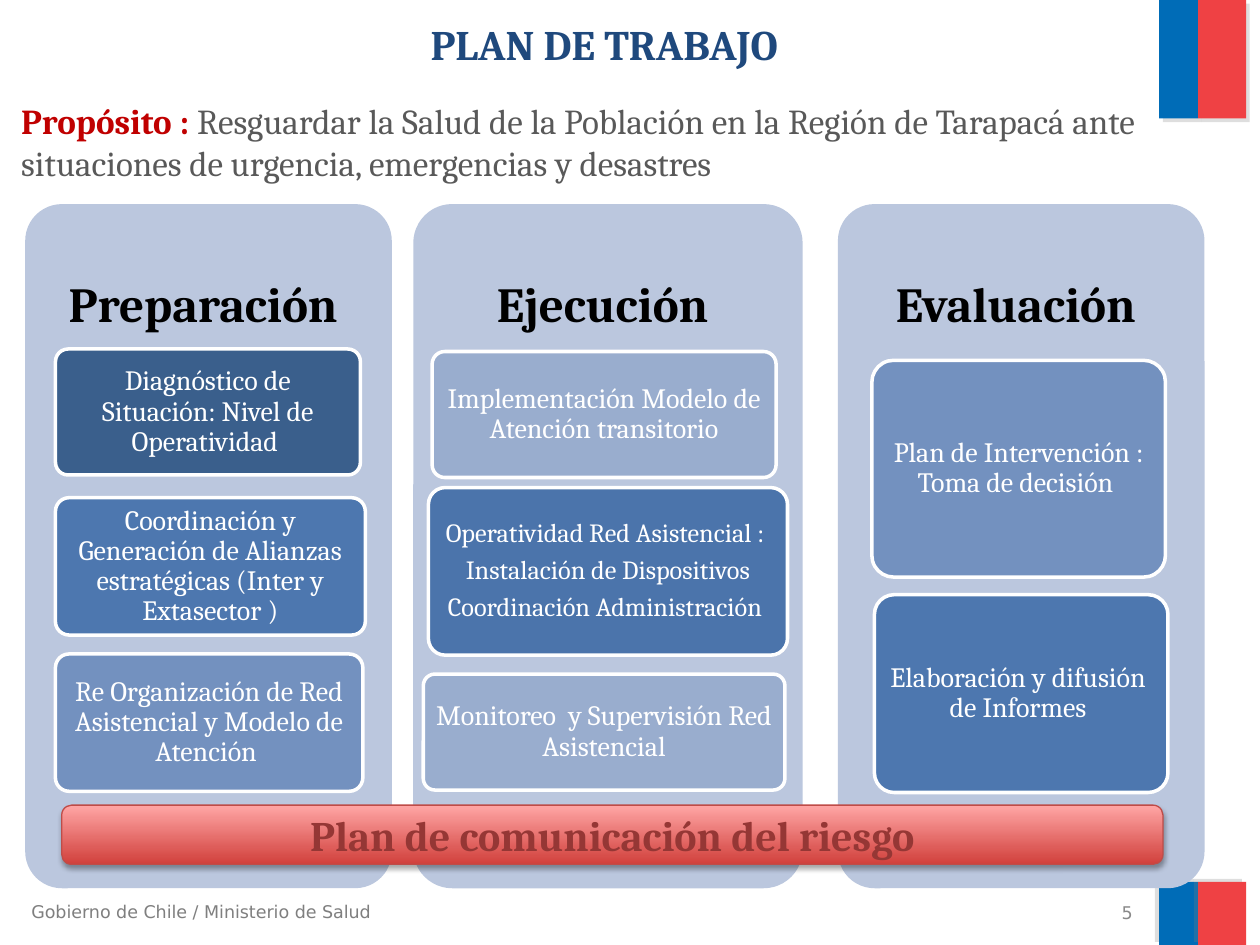
from lxml import etree
from pptx import Presentation
from pptx import util as u
from pptx.dml.color import RGBColor
from pptx.enum import shapes, text
from pptx.oxml.ns import qn

COLORS = {
    "blue": "006CB7", "red": "EF4144", "navy": "1F497D", "crimson": "C00000",
    "gray": "595959", "footer": "7F7F7F", "number": "898989", "black": "000000",
    "white": "FFFFFF", "panel": "BBC7DE", "dark": "3A5F8C", "medium": "4D77AF",
    "network": "4B74AB", "soft": "7391BF", "pale": "99ADCE",
    "banner_low": "D1403C", "banner_high": "FFA6A5", "banner_line": "BF4C48",
    "banner_text": "953735", "shade": "808080",
}
SERIF, SANS = "Cambria", "DejaVu Sans"
LEFT, CENTER, RIGHT = (text.PP_ALIGN.LEFT, text.PP_ALIGN.CENTER,
                       text.PP_ALIGN.RIGHT)
TOP, MIDDLE = text.MSO_ANCHOR.TOP, text.MSO_ANCHOR.MIDDLE
RECT = shapes.MSO_SHAPE.RECTANGLE
ROUND = shapes.MSO_SHAPE.ROUNDED_RECTANGLE
TIGHT = {"line_spacing": 0.9, "space_after": u.Pt(5)}

PANEL_TOP, PANEL_HEIGHT, HEADING_HEIGHT = 1.62, 5.43, 1.63
# Each panel: heading, left, width, cards (box, colour, text size, paragraphs)
PANELS = [
    ("Preparación ", 0.2, 2.91, [
        ((0.44, 2.77, 2.42, 1), "dark", 16,
         ["Diagnóstico de Situación: Nivel de Operatividad "]),
        ((0.44, 3.95, 2.46, 1.09), "medium", 16,
         ["Coordinación y Generación de Alianzas estratégicas "
          "(Inter y Extasector )"]),
        ((0.44, 5.19, 2.44, 1.09), "soft", 16,
         ["Re Organización de Red Asistencial y Modelo de Atención "]),
    ]),
    ("Ejecución ", 3.28, 3.09, [
        ((3.43, 2.79, 2.73, 1), "pale", 16,
         ["Implementación Modelo de Atención transitorio"]),
        ((3.4, 3.87, 2.85, 1.33), "network", 15,
         ["Operatividad Red Asistencial : ", "Instalación de Dispositivos",
          "Coordinación Administración "]),
        ((3.36, 5.35, 2.87, 0.92), "pale", 16,
         ["Monitoreo  y Supervisión Red Asistencial"]),
    ]),
    ("Evaluación ", 6.65, 2.91, [
        ((6.92, 2.86, 2.33, 1.72), "soft", 16,
         ["Plan de Intervención : Toma de decisión "]),
        ((6.94, 4.72, 2.33, 1.57), "medium", 16,
         ["Elaboración y difusión  de Informes "]),
    ]),
]


def rgb(name):
    return RGBColor.from_string(COLORS[name])


def inches(box):
    return [u.Inches(v) for v in box]


def font(size, color, bold=False, name=SERIF):
    return {"size": u.Pt(size), "color": color, "bold": bold, "name": name}


class Deck:
    """Holds the style and the current slide."""

    def __init__(self, width, height):
        self.prs = Presentation()
        self.prs.slide_width, self.prs.slide_height = inches((width, height))
        self.s = self.prs.slides.add_slide(self.prs.slide_layouts[5])

    def fill_text(self, sp, paragraphs, align=LEFT, anchor=TOP,
                  inset=(0.1, 0.05), para=None):
        """Fill a shape with paragraphs, each a list of (text, font) runs."""
        tf = sp.text_frame
        x, y = inches(inset)
        frame = {"word_wrap": True, "auto_size": text.MSO_AUTO_SIZE.NONE,
                 "vertical_anchor": anchor, "margin_left": x,
                 "margin_right": x, "margin_top": y, "margin_bottom": y}
        for key, value in frame.items():
            setattr(tf, key, value)
        for i, runs in enumerate(paragraphs):
            p = tf.add_paragraph() if i else tf.paragraphs[0]
            for key, value in {"alignment": align, **(para or {})}.items():
                setattr(p, key, value)
            for words, style in runs:
                r = p.add_run()
                r.text = words
                for key, value in style.items():
                    if key == "color":
                        r.font.color.rgb = rgb(value)
                    else:
                        setattr(r.font, key, value)

    def title(self, box, words, style):
        sp = self.s.shapes.title
        sp.left, sp.top, sp.width, sp.height = inches(box)
        self.fill_text(sp, [[(words, style)]], CENTER)

    def text(self, box, paragraphs, **layout):
        sp = self.s.shapes.add_textbox(*inches(box))
        self.fill_text(sp, paragraphs, **layout)

    def shape(self, kind, box, fill=None, line=None, weight=2, adj=None):
        sp = self.s.shapes.add_shape(kind, *inches(box))
        sp.shadow.inherit = False
        if fill:
            sp.fill.solid()
            sp.fill.fore_color.rgb = rgb(fill)
        if line:
            sp.line.color.rgb = rgb(line)
            sp.line.width = u.Pt(weight)
        else:
            sp.line.fill.background()
        if adj is not None:
            sp.adjustments[0] = adj
        return sp

    def shadow(self, sp, color, alpha, blur, dist, angle):
        effects = sp._element.spPr.find(qn("a:effectLst"))
        outer = etree.SubElement(
            effects, qn("a:outerShdw"), blurRad=str(u.Pt(blur)),
            dist=str(u.Pt(dist)), dir=str(angle * 60000), rotWithShape="0")
        clr = etree.SubElement(outer, qn("a:srgbClr"), val=COLORS[color])
        etree.SubElement(clr, qn("a:alpha"), val=str(alpha * 1000))

    def flag(self, top, height, angle):
        for left, width, color in ((9.2, 0.31, "blue"), (9.51, 0.38, "red")):
            sp = self.shape(RECT, (left, top, width, height), color)
            self.shadow(sp, "shade", 25, 0, 3, angle)

    def panel(self, heading, left, width, cards):
        self.shape(ROUND, (left, PANEL_TOP, width, PANEL_HEIGHT), "panel",
                   adj=0.1)
        self.text((left, PANEL_TOP, width, HEADING_HEIGHT),
                  [[(heading, font(28, "black", True))]], align=CENTER,
                  anchor=MIDDLE, inset=(0.12, 0.12), para=TIGHT)
        for card in cards:
            self.card(*card)

    def card(self, box, fill, size, lines):
        sp = self.shape(ROUND, box, fill, "white", adj=0.1)
        style = font(size, "white")
        self.fill_text(sp, [[(line, style)] for line in lines], CENTER, MIDDLE,
                       (0.07, 0.06), TIGHT)

    def banner(self, box, words):
        sp = self.shape(ROUND, box, line="banner_line", weight=0.75)
        sp.fill.gradient()
        sp.fill.gradient_angle = 90
        stops = zip(sp.fill.gradient_stops, ("banner_low", "banner_high"))
        for position, (stop, color) in enumerate(stops):
            stop.position = position
            stop.color.rgb = rgb(color)
        self.shadow(sp, "black", 35, 3.1, 1.8, 90)
        self.fill_text(sp, [[(words, font(24, "banner_text", True))]], CENTER,
                       MIDDLE)


def main():
    deck = Deck(10, 7.5)
    deck.flag(0, 0.94, 45)
    deck.flag(7, 0.5, 215)
    deck.title((0.33, 0.1, 8.93, 0.67), "PLAN DE TRABAJO",
               font(24, "navy", True))
    deck.text((0.07, 0.74, 9.49, 0.8), [[
        ("Propósito : ", font(20, "crimson", True)),
        ("Resguardar la Salud de la Población en la Región de Tarapacá ante "
         "situaciones de urgencia, emergencias y desastres",
         font(20, "gray")),
    ]])
    deck.text((0.15, 7.1, 3.02, 0.27),
              [[("Gobierno de Chile / Ministerio de Salud",
                 font(10, "footer", name=SANS))]])
    deck.text((6.76, 7.14, 2.33, 0.21),
              [[("5", font(10, "number", name=SANS))]],
              align=RIGHT, anchor=MIDDLE)
    for panel in PANELS:
        deck.panel(*panel)
    deck.banner((0.49, 6.39, 8.74, 0.47), "Plan de comunicación del riesgo")
    deck.prs.save("out.pptx")


if __name__ == "__main__":
    main()
